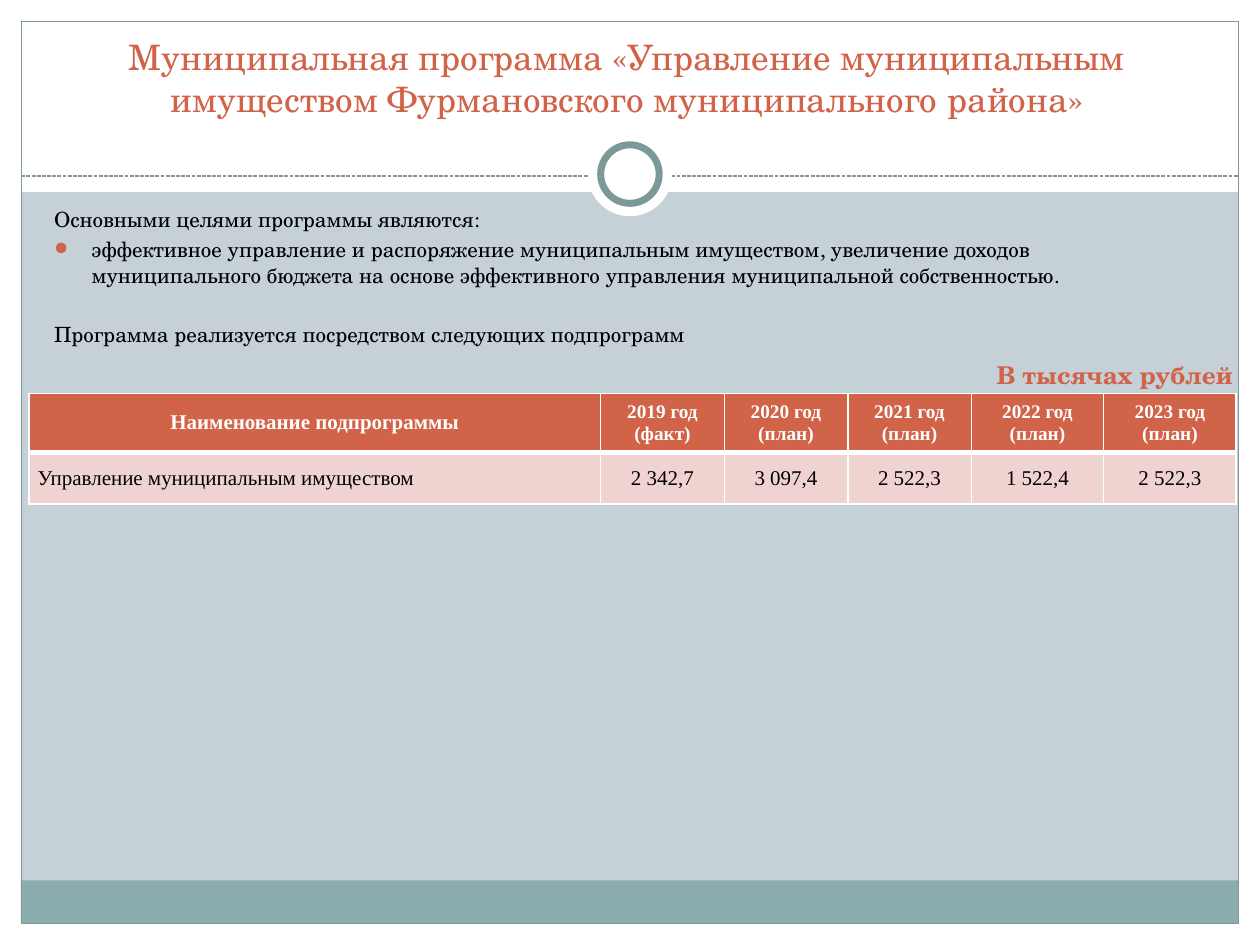
"""Builds a slide on a municipal property programme with its funding table."""
import pptx
import pptx.dml.color
import pptx.enum.dml
import pptx.enum.shapes
import pptx.enum.text
import pptx.oxml
import pptx.oxml.ns
import pptx.util

Cm, Pt = pptx.util.Cm, pptx.util.Pt
SHAPE = pptx.enum.shapes.MSO_SHAPE
ALIGN = pptx.enum.text.PP_ALIGN
ANCHOR = pptx.enum.text.MSO_ANCHOR

COLORS = {
    "background": "C5D1D7",
    "white": "FFFFFF",
    "footer": "8CADAE",
    "frame": "7C999A",
    "accent": "D16349",
    "row": "EED3D0",
    "text": "000000",
}
SERIF, TABLE_FONT = "TeX Gyre Schola", "Times New Roman"
YEARS = [("2019", "факт"), ("2020", "план"), ("2021", "план"), ("2022", "план"), ("2023", "план")]
AMOUNTS = ["2 342,7", "3 097,4", "2 522,3", "1 522,4", "2 522,3"]


def rgb(name):
    return pptx.dml.color.RGBColor.from_string(COLORS[name])


def xml(tag, body="", attrs=""):
    return pptx.oxml.parse_xml(f'<a:{tag} {pptx.oxml.ns.nsdecls("a")} {attrs}>{body}</a:{tag}>')


def solid(name):
    return f'<a:solidFill><a:srgbClr val="{COLORS[name]}"/></a:solidFill>'


def add_block(s, kind, box, fill=None, line=None, width=0.75):
    sp = s.shapes.add_shape(kind, *map(Cm, box))
    sp.shadow.inherit = False
    if fill:
        sp.fill.solid()
        sp.fill.fore_color.rgb = rgb(fill)
    else:
        sp.fill.background()
    if line:
        sp.line.color.rgb = rgb(line)
        sp.line.width = Pt(width)
    else:
        sp.line.fill.background()


def add_dashed_line(s, left, right, y):
    line = s.shapes.add_connector(
        pptx.enum.shapes.MSO_CONNECTOR.STRAIGHT, Cm(left), Cm(y), Cm(right), Cm(y))
    line.line.color.rgb = rgb("frame")
    line.line.width = Pt(0.75)
    line.line.dash_style = pptx.enum.dml.MSO_LINE.SQUARE_DOT
    line._element.spPr.append(xml("effectLst"))


def format_text(tf, size, color, font=SERIF, bold=False, align=ALIGN.LEFT):
    for p in tf.paragraphs:
        p.alignment = align
        for r in p.runs:
            r.font.size = Pt(size)
            r.font.name = font
            r.font.bold = bold
            r.font.color.rgb = rgb(color)


def add_text(s, box, text, size, color, wrap=True, anchor=ANCHOR.TOP, **style):
    tf = s.shapes.add_textbox(*map(Cm, box)).text_frame
    tf.text = text
    tf.word_wrap = wrap
    tf.vertical_anchor = anchor
    format_text(tf, size, color, **style)
    return tf


def set_bullet(p):
    pPr = p._p.get_or_add_pPr()
    pPr.append(xml("buClr", f'<a:srgbClr val="{COLORS["accent"]}"/>'))
    pPr.append(xml("buSzPct", attrs='val="85000"'))
    pPr.append(xml("buChar", attrs='char="●"'))


def add_goals(s):
    tf = add_text(s, (0.84, 4.04, 23.62, 1.7), "\n".join([
        "Основными целями программы являются:",
        "эффективное управление и распоряжение муниципальным имуществом, увеличение доходов "
        "муниципального бюджета на основе эффективного управления муниципальной собственностью.",
        "Программа реализуется посредством следующих подпрограмм",
    ]), 12, "text")
    for p, gap in zip(tf.paragraphs, (2.9, 2.9, 19.5)):
        p.space_before = Pt(gap)
        pPr = p._p.get_or_add_pPr()
        pPr.set("marL", str(Cm(0.76)))
        pPr.set("indent", str(-Cm(0.76)))
    set_bullet(tf.paragraphs[1])


def fill_cell(cell, text, fill, size, bottom, **style):
    cell.text_frame.text = text
    cell.vertical_anchor = ANCHOR.MIDDLE
    cell.margin_left = cell.margin_right = Cm(0.18)
    cell.margin_top = cell.margin_bottom = 0
    format_text(cell.text_frame, size, font=TABLE_FONT, **style)
    tcPr = cell._tc.get_or_add_tcPr()
    for side, width in (("L", 1), ("R", 1), ("T", 1), ("B", bottom)):
        tcPr.append(xml(f"ln{side}", solid("white"), f'w="{Pt(width)}"'))
    cell.fill.solid()
    cell.fill.fore_color.rgb = rgb(fill)


def add_funding_table(s):
    widths = [11.53] + [2.49] * 3 + [2.67] * 2
    heights = [1.19, 1.04]
    table = s.shapes.add_table(
        2, len(widths), Cm(0.58), Cm(7.93), Cm(sum(widths)), Cm(sum(heights))).table
    for column, width in zip(table.columns, widths):
        column.width = Cm(width)
    for row, height in zip(table.rows, heights):
        row.height = Cm(height)
    header = ["Наименование подпрограммы"] + [f"{year} год\n({kind})" for year, kind in YEARS]
    values = ["Управление муниципальным имуществом"] + AMOUNTS
    for i, (title, value) in enumerate(zip(header, values)):
        fill_cell(table.cell(0, i), title, "accent", 11 if i else 12, 3,
                  color="white", bold=True, align=ALIGN.CENTER)
        fill_cell(table.cell(1, i), value, "row", 12, 1,
                  color="text", align=ALIGN.CENTER if i else ALIGN.LEFT)


def add_backdrop(s):
    s.background.fill.solid()
    s.background.fill.fore_color.rgb = rgb("background")
    for box in ((0, 18.62, 25.4, 0.43), (0, 0, 25.4, 3.87),
                (0, 0, 0.43, 19.05), (24.97, 0, 0.43, 19.05)):
        add_block(s, SHAPE.RECTANGLE, box, "white")
    add_block(s, SHAPE.RECTANGLE, (0.42, 17.75, 24.54, 0.87), "footer")
    add_block(s, SHAPE.RECTANGLE, (0.43, 0.43, 24.54, 18.19), line="frame")
    add_dashed_line(s, 0.43, 24.97, 3.55)
    add_block(s, SHAPE.OVAL, (11.85, 2.66, 1.7, 1.7), "white")
    add_block(s, SHAPE.OVAL, (12.11, 2.92, 1.18, 1.18), "white", "frame", 4)


def main():
    prs = pptx.Presentation()
    prs.slide_width, prs.slide_height = Cm(25.4), Cm(19.05)
    s = prs.slides.add_slide(prs.slide_layouts[6])
    add_backdrop(s)
    add_text(s, (0.79, 1.19, 23.7, 1.35),
             "Муниципальная программа «Управление муниципальным имуществом "
             "Фурмановского муниципального района»",
             20, "accent", anchor=ANCHOR.BOTTOM, align=ALIGN.CENTER)
    add_goals(s)
    add_funding_table(s)
    add_text(s, (19.84, 7.14, 5.77, 0.79), "В тысячах рублей", 14, "accent",
             wrap=False, bold=True)
    prs.save("out.pptx")


if __name__ == "__main__":
    main()
